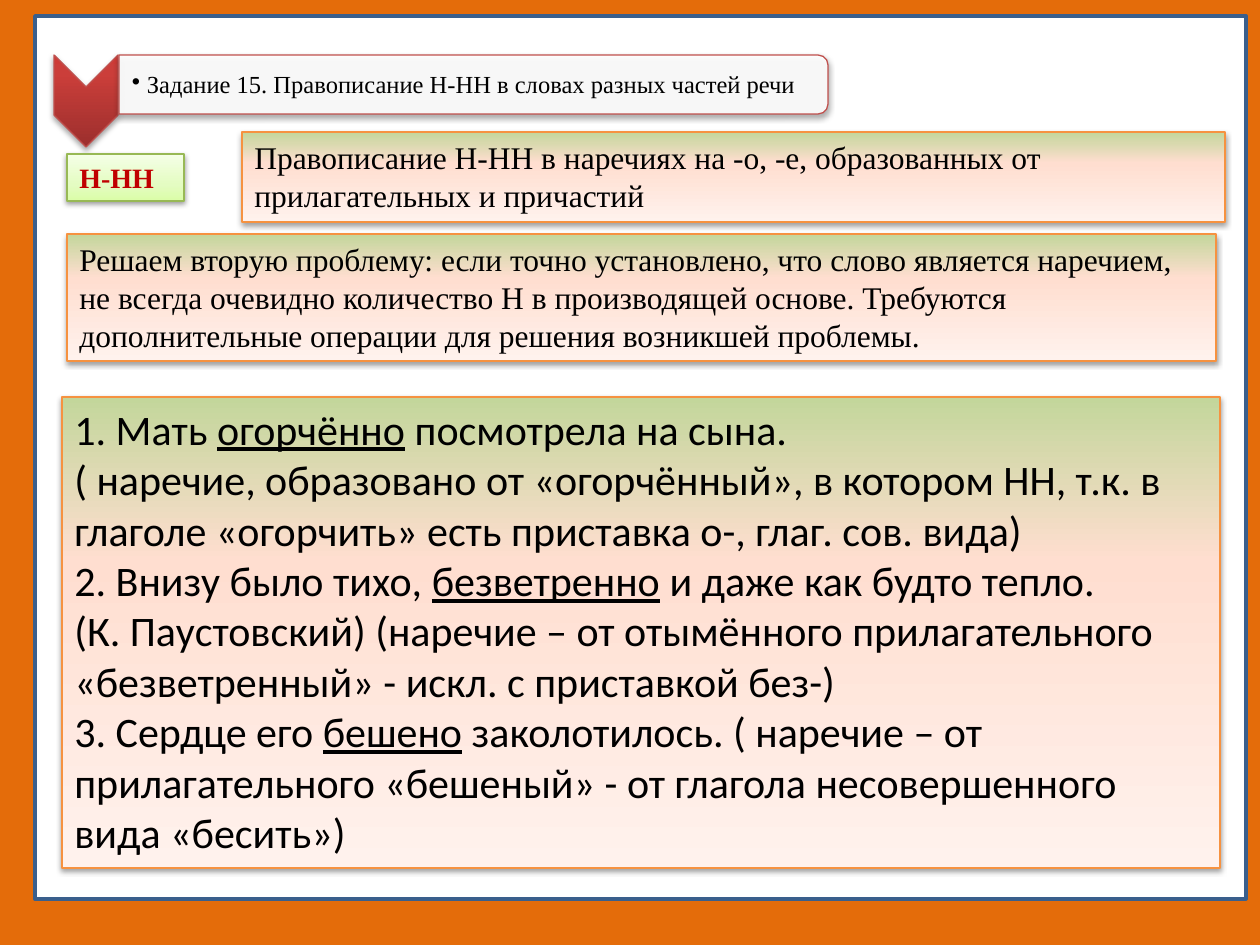
import pptx
import pptx.util
import pptx.dml.color
import pptx.enum.shapes
import pptx.enum.text
import pptx.oxml
import pptx.oxml.ns

SHAPE = pptx.enum.shapes.MSO_SHAPE
ANCHOR = pptx.enum.text.MSO_ANCHOR
LEFT = pptx.enum.text.PP_ALIGN.LEFT
Pt = pptx.util.Pt
NS = pptx.oxml.ns.nsdecls("a")
qn = pptx.oxml.ns.qn
rgb = pptx.dml.color.RGBColor.from_string
SERIF = "Times New Roman"


def px(n):
    """Pixels at 126 to the inch, as EMU."""
    return pptx.util.Emu(round(n * 914400 / 126))


def add_panel(kind, box, line, stops, angle, dist=20000, alpha=38):
    """Add a shadowed shape; stops are (percent, colour), angle is counter-clockwise."""
    sp = s.shapes.add_shape(kind, *map(px, box))
    sp.line.color.rgb = rgb(line)
    sp.line.width = Pt(0.75)
    sp.fill.gradient()
    sp.fill.gradient_angle = angle
    grad = sp._element.spPr.find(qn("a:gradFill"))
    grad.set("rotWithShape", "0")
    gs_list = grad.find(qn("a:gsLst"))
    for gs in list(gs_list):
        gs_list.remove(gs)
    for pos, color in stops:
        gs_list.append(pptx.oxml.parse_xml(
            f'<a:gs {NS} pos="{pos * 1000}"><a:srgbClr val="{color}"/></a:gs>'))
    sp.shadow.inherit = False
    sp._element.spPr.find(qn("a:effectLst")).append(pptx.oxml.parse_xml(
        f'<a:outerShdw {NS} blurRad="40000" dist="{dist}" dir="5400000" rotWithShape="0">'
        f'<a:srgbClr val="000000"><a:alpha val="{alpha * 1000}"/></a:srgbClr></a:outerShdw>'))
    return sp


prs = pptx.Presentation()
prs.slide_width, prs.slide_height = px(1260), px(945)
s = prs.slides.add_slide(prs.slide_layouts[6])
s.background.fill.solid()
s.background.fill.fore_color.rgb = rgb("E46C0A")

# White page
page = s.shapes.add_shape(SHAPE.RECTANGLE, px(35), px(16), px(1211), px(883))
page.shadow.inherit = False
page.fill.solid()
page.fill.fore_color.rgb = rgb("FFFFFF")
page.line.color.rgb = rgb("3A5F8C")
page.line.width = Pt(2)

# Heading: chevron, rounded bar and bulleted text
chevron = add_panel(SHAPE.CHEVRON, (40, 69, 92, 64), "C0504D",
                    [(0, "9C2F2D"), (80, "CB3E3A"), (100, "CE3B37")], 90, 23000, 35)
bar = add_panel(SHAPE.ROUND_2_SAME_RECTANGLE, (444, -270, 59, 709), "C0504D",
                [], 0, 23000, 35)
bar.fill.solid()
bar.fill.fore_color.rgb = rgb("FFFFFF")
bar._element.spPr.find(qn("a:solidFill"))[0].append(
    pptx.oxml.parse_xml(f'<a:alpha {NS} val="90000"/>'))
chevron.rotation = bar.rotation = 90

tf = s.shapes.add_textbox(px(118), px(59), px(707), px(54)).text_frame
tf.word_wrap = True
tf.vertical_anchor = ANCHOR.MIDDLE
tf.margin_left = px(14)
tf.margin_top = tf.margin_right = tf.margin_bottom = px(1)
p = tf.paragraphs[0]
p.text = "Задание 15. Правописание Н-НН в словах разных частей речи"
p.line_spacing = 0.9
p.font.size = Pt(14)
p.font.name = SERIF
p.font.color.rgb = rgb("000000")
pPr = p._p.get_or_add_pPr()
pPr.set("marL", str(px(15)))
pPr.set("indent", str(-px(15)))
pPr.find(qn("a:defRPr")).addprevious(pptx.oxml.parse_xml(f'<a:buChar {NS} char="•"/>'))

# Text panels; underscores enclose underlined words
PEACH = ("F69240", [(0, "C3D69B"), (35, "FFDED0"), (100, "FFF2ED")], 270)
GREEN = ("98B955", [(0, "DAFDA7"), (35, "E4FCC2"), (100, "F5FFE7")], 90)
panels = [
    ((242, 132, 983, 90), PEACH, SERIF, 18, "000000", False, [
        "Правописание Н-НН в наречиях на -о, -е, образованных от прилагательных и причастий"]),
    ((67, 154, 117, 47), GREEN, SERIF, 16, "C00000", True, ["Н-НН"]),
    ((67, 234, 1149, 127), PEACH, SERIF, 18, "000000", False, [
        "Решаем вторую проблему: если точно установлено, что слово является наречием, "
        "не всегда очевидно количество Н в производящей основе. Требуются "
        "дополнительные операции для решения возникшей проблемы."]),
    ((62, 397, 1158, 471), PEACH, "Calibri", 24, "000000", False, [
        "1. Мать _огорчённо_ посмотрела на сына.",
        "( наречие, образовано от «огорчённый», в котором НН, т.к. в глаголе "
        "«огорчить» есть приставка о-, глаг. сов. вида)",
        "2. Внизу было тихо, _безветренно_ и даже как будто тепло.",
        "(К. Паустовский) (наречие – от отымённого прилагательного "
        "«безветренный» - искл. с приставкой без-)",
        "3. Сердце его _бешено_ заколотилось. ( наречие – от прилагательного "
        "«бешеный» - от глагола несовершенного вида «бесить»)"]),
]
for box, style, font, size, color, bold, lines in panels:
    tf = add_panel(SHAPE.RECTANGLE, box, *style).text_frame
    tf.word_wrap = True
    tf.auto_size = pptx.enum.text.MSO_AUTO_SIZE.SHAPE_TO_FIT_TEXT
    tf.vertical_anchor = ANCHOR.TOP
    for i, line in enumerate(lines):
        p = tf.add_paragraph() if i else tf.paragraphs[0]
        p.alignment = LEFT
        p.font.name = font
        p.font.size = Pt(size)
        p.font.bold = bold
        p.font.color.rgb = rgb(color)
        for j, part in enumerate(line.split("_")):
            r = p.add_run()
            r.text = part
            if j % 2:
                r.font.underline = True

prs.save("out.pptx")
